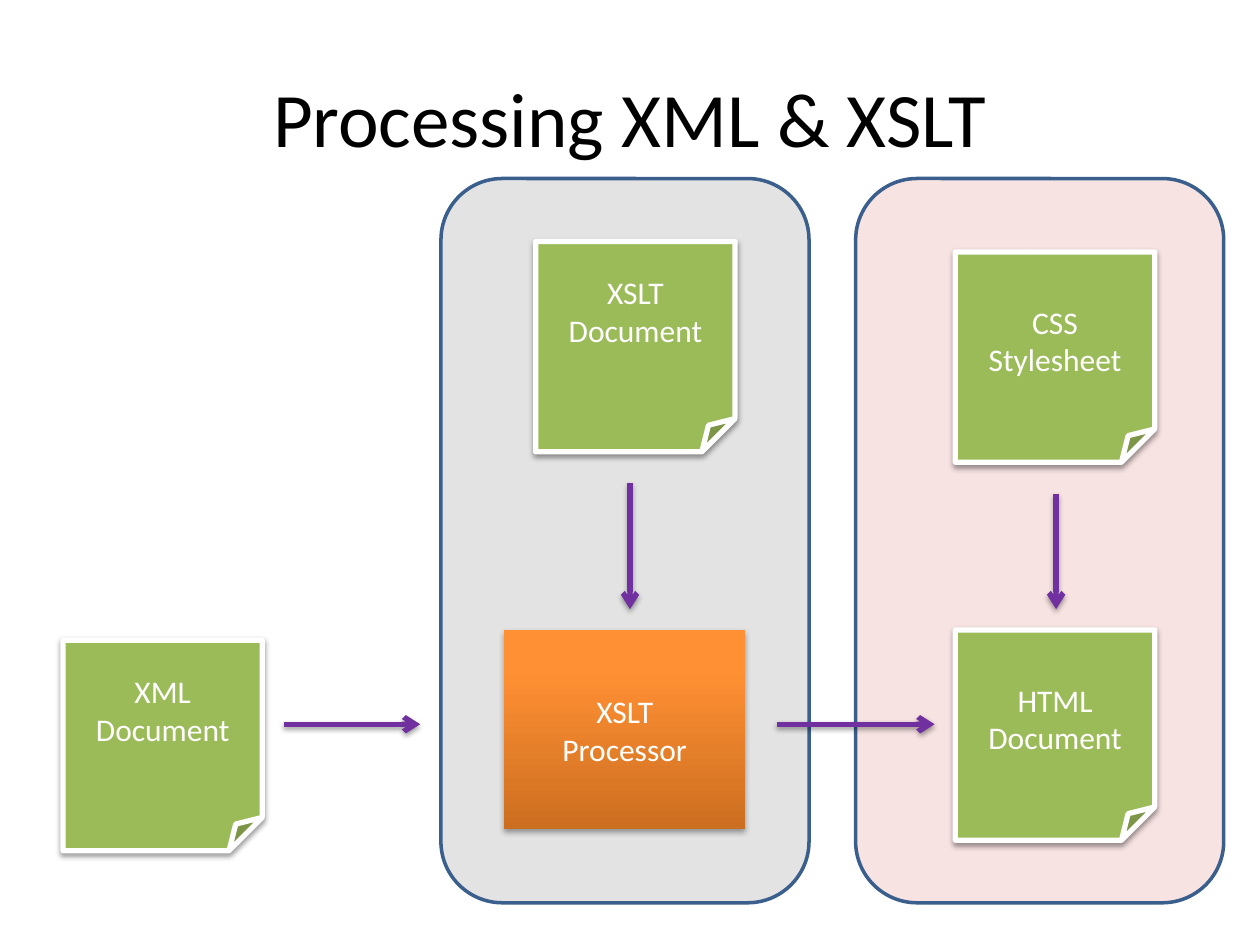
from lxml import etree
from pptx import Presentation
from pptx.dml.color import RGBColor
from pptx.enum.shapes import MSO_CONNECTOR, MSO_SHAPE as SHAPE
from pptx.enum.text import MSO_ANCHOR, PP_ALIGN
from pptx.oxml.ns import qn
from pptx.util import Cm, Pt

COLORS = {
    "black": "000000",
    "white": "FFFFFF",
    "red": "C00000",
    "outline": "3A5F8C",
    "green": "9BBB59",
    "purple": "7030A0",
    "orange_dark": "CC6E20",
    "orange_light": "FF9034",
}
FONT = "Calibri"
PANEL_TOP, PANEL_W, PANEL_H = 3.6, 7.42, 14.6
DOC_W, DOC_H = 4.02, 4.24
INSET = 0.13
RAISED = 0.9  # bottom inset that lifts a label by half a line
FLOW_Y = 14.6


def rgb(name):
    return RGBColor.from_string(COLORS[name])


def set_text(shape, text, size, color):
    tf = shape.text_frame
    tf.text = text
    tf.word_wrap = True
    tf.vertical_anchor = MSO_ANCHOR.MIDDLE
    for p in tf.paragraphs:
        p.alignment = PP_ALIGN.CENTER
        for r in p.runs:
            r.font.name = FONT
            r.font.size = Pt(size)
            r.font.color.rgb = rgb(color)


def add_shadow(effects, distance=20000, opacity=38):
    shadow = etree.SubElement(effects, qn("a:outerShdw"), blurRad="40000",
                              dist=str(distance), dir="5400000", rotWithShape="0")
    color = etree.SubElement(shadow, qn("a:srgbClr"), val=COLORS["black"])
    etree.SubElement(color, qn("a:alpha"), val=str(opacity * 1000))


def add_box(slide, kind, left, top, width, height):
    sp = slide.shapes.add_shape(kind, Cm(left), Cm(top), Cm(width), Cm(height))
    sp.shadow.inherit = False
    return sp


def add_panel(slide, left, color):
    sp = add_box(slide, SHAPE.ROUNDED_RECTANGLE, left, PANEL_TOP, PANEL_W, PANEL_H)
    sp.fill.solid()
    sp.fill.fore_color.rgb = rgb(color)
    fill_color = sp.fill._xPr.find(qn("a:solidFill"))[0]
    etree.SubElement(fill_color, qn("a:alpha"), val="11000")
    sp.line.color.rgb = rgb("outline")
    sp.line.width = Pt(2)


def add_document(slide, text, left, top, bottom_inset=INSET):
    sp = add_box(slide, SHAPE.FOLDED_CORNER, left, top, DOC_W, DOC_H)
    sp.fill.solid()
    sp.fill.fore_color.rgb = rgb("green")
    sp.line.color.rgb = rgb("white")
    sp.line.width = Pt(3)
    add_shadow(sp._element.spPr.find(qn("a:effectLst")))
    set_text(sp, text, 18, "white")
    sp.text_frame.margin_bottom = Cm(bottom_inset)


def add_processor(slide, text, left, top, width, height):
    sp = add_box(slide, SHAPE.RECTANGLE, left, top, width, height)
    sp.fill.gradient()
    sp.fill.gradient_angle = 90
    stops = [(0, "orange_dark"), (0.8, "orange_light")]
    for stop, (position, color) in zip(sp.fill.gradient_stops, stops):
        stop.position = position
        stop.color.rgb = rgb(color)
    sp.line.fill.background()
    add_shadow(sp._element.spPr.find(qn("a:effectLst")), 23000, 35)
    set_text(sp, text, 18, "white")


def add_arrow(slide, x1, y1, x2, y2):
    line = slide.shapes.add_connector(MSO_CONNECTOR.STRAIGHT,
                                      Cm(x1), Cm(y1), Cm(x2), Cm(y2))
    line.line.color.rgb = rgb("purple")
    line.line.width = Pt(3)
    etree.SubElement(line.line._get_or_add_ln(), qn("a:tailEnd"), type="arrow")
    add_shadow(etree.SubElement(line._element.spPr, qn("a:effectLst")))


def main():
    prs = Presentation()
    prs.slide_width, prs.slide_height = Cm(25.4), Cm(19.05)
    slide = prs.slides.add_slide(prs.slide_layouts[5])

    # Title
    title = slide.shapes.title
    title.left, title.top = Cm(1.27), Cm(0.76)
    title.width, title.height = Cm(22.86), Cm(3.18)
    set_text(title, "Processing XML & XSLT", 44, "black")

    # Background panels
    add_panel(slide, 17.25, "red")
    add_panel(slide, 8.89, "black")

    # Documents and processor
    add_document(slide, "XSLT Document", 10.8, 4.87, RAISED)
    add_document(slide, "XML Document", 1.27, 12.91, RAISED)
    add_document(slide, "HTML Document", 19.26, 12.7)
    add_document(slide, "CSS Stylesheet", 19.26, 5.08)
    add_processor(slide, "XSLT\nProcessor", 10.16, 12.7, 4.87, 4.02)

    # Flow arrows: horizontal, then vertical
    for start, end in [(5.72, 8.47), (15.66, 18.84)]:
        add_arrow(slide, start, FLOW_Y, end, FLOW_Y)
    for x, start in [(21.29, 9.95), (12.7, 9.74)]:
        add_arrow(slide, x, start, x, 12.28)

    prs.save("out.pptx")


if __name__ == "__main__":
    main()
